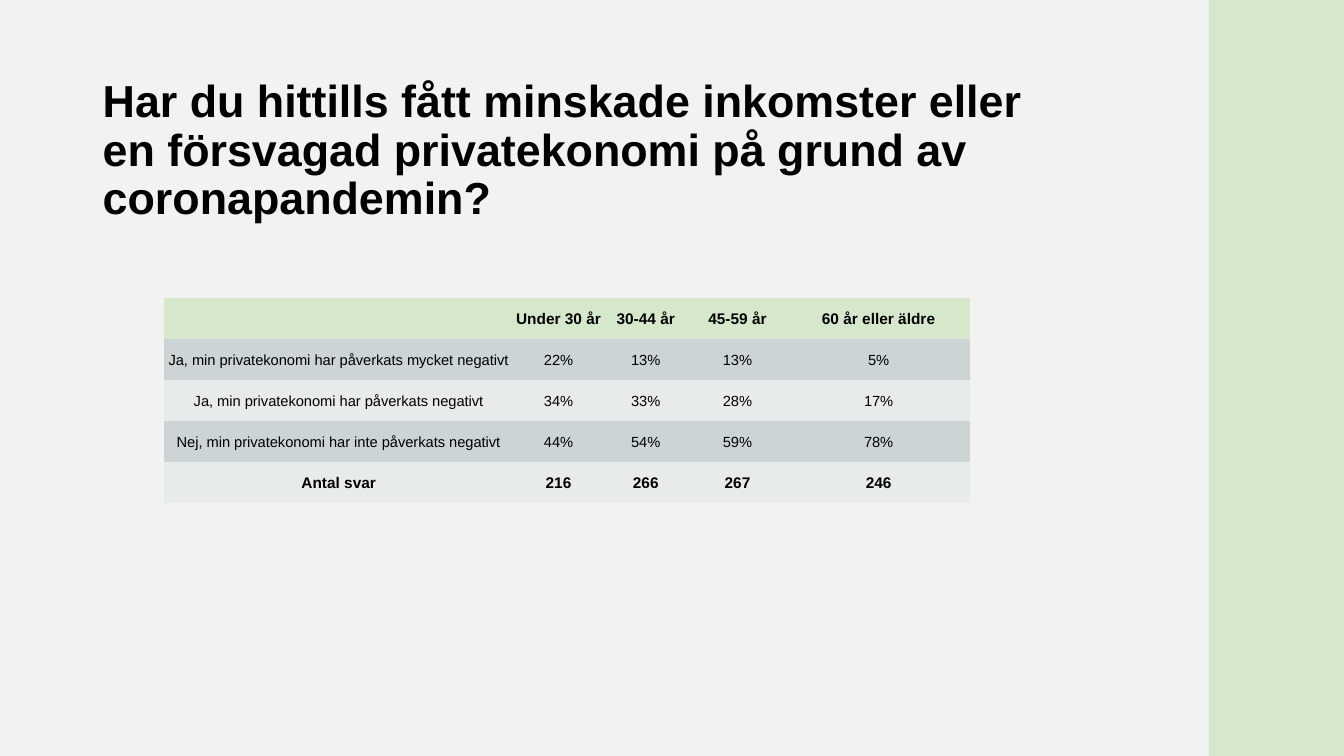
from dataclasses import dataclass

from pptx import Presentation
from pptx.dml.color import RGBColor
from pptx.enum.shapes import MSO_SHAPE
from pptx.enum.text import MSO_ANCHOR, PP_ALIGN
from pptx.oxml.ns import qn
from pptx.util import Inches, Pt

RECTANGLE = MSO_SHAPE.RECTANGLE
MIDDLE = MSO_ANCHOR.MIDDLE
LEFT, CENTER = PP_ALIGN.LEFT, PP_ALIGN.CENTER
NO_STYLE_NO_GRID = "{2D5ABB26-0587-4C30-8999-92F81FD0307C}"

QUESTION = ("Har du hittills fått minskade inkomster eller en försvagad "
            "privatekonomi på grund av coronapandemin?")
AGE_GROUPS = ["", "Under 30 år", "30-44 år", "45-59 år", "60 år eller äldre"]
ANSWERS = [
    ["Ja, min privatekonomi har påverkats mycket negativt", "22%", "13%", "13%", "5%"],
    ["Ja, min privatekonomi har påverkats negativt", "34%", "33%", "28%", "17%"],
    ["Nej, min privatekonomi har inte påverkats negativt", "44%", "54%", "59%", "78%"],
]
RESPONSES = ["Antal svar", "216", "266", "267", "246"]

STRIPE_BOX = (11.99, -0.14, 1.35, 7.64)
QUESTION_BOX = (0.92, 1.16, 9.64, 0.69)
TABLE_BOX = (1.63, 2.96, 8, 2.03)
COLUMN_WIDTHS = [3.46, 0.9, 0.83, 0.99, 1.81]


@dataclass(frozen=True)
class Theme:
    font: str = "Arial"
    background: str = "F2F2F0"
    accent: str = "D5E8CB"
    bands: tuple = ("CCD4D5", "E7EBEB")
    text: str = "000000"
    title_size: float = 32
    strong_size: float = 11
    answer_size: float = 10.5


THEME = Theme()


def paint(fill, color):
    fill.solid()
    fill.fore_color.rgb = RGBColor.from_string(color)


def inches(box):
    return [Inches(length) for length in box]


def write(frame, text, size, bold=False, align=LEFT, line_spacing=None):
    paragraph = frame.paragraphs[0]
    paragraph.alignment = align
    paragraph.line_spacing = line_spacing
    run = paragraph.add_run()
    run.text = text
    run.font.name = THEME.font
    run.font.size = Pt(size)
    run.font.bold = bold
    run.font.color.rgb = RGBColor.from_string(THEME.text)


def add_stripe(slide):
    stripe = slide.shapes.add_shape(RECTANGLE, *inches(STRIPE_BOX))
    stripe.shadow.inherit = False
    paint(stripe.fill, THEME.accent)
    stripe.line.fill.background()


def add_question(slide):
    frame = slide.shapes.add_textbox(*inches(QUESTION_BOX)).text_frame
    frame.word_wrap = True
    frame.vertical_anchor = MIDDLE
    write(frame, QUESTION, THEME.title_size, bold=True, line_spacing=0.9)


def add_results(slide):
    rows = [AGE_GROUPS, *ANSWERS, RESPONSES]
    table = slide.shapes.add_table(len(rows), len(AGE_GROUPS), *inches(TABLE_BOX)).table
    table._tbl.tblPr.find(qn("a:tableStyleId")).text = NO_STYLE_NO_GRID
    for column, width in zip(table.columns, COLUMN_WIDTHS):
        column.width = Inches(width)
    for r, labels in enumerate(rows):
        strong = labels in (AGE_GROUPS, RESPONSES)
        size = THEME.strong_size if strong else THEME.answer_size
        color = THEME.accent if r == 0 else THEME.bands[(r - 1) % 2]
        for c, label in enumerate(labels):
            cell = table.cell(r, c)
            paint(cell.fill, color)
            cell.vertical_anchor = MIDDLE
            cell.margin_left = cell.margin_right = cell.margin_top = Inches(0.01)
            cell.margin_bottom = 0
            if label:
                write(cell.text_frame, label, size, bold=strong, align=CENTER)


def main():
    presentation = Presentation()
    presentation.slide_width = Inches(13.33)
    presentation.slide_height = Inches(7.5)
    slide = presentation.slides.add_slide(presentation.slide_layouts[6])
    paint(slide.background.fill, THEME.background)
    add_stripe(slide)
    add_question(slide)
    add_results(slide)
    presentation.save("out.pptx")


if __name__ == "__main__":
    main()
